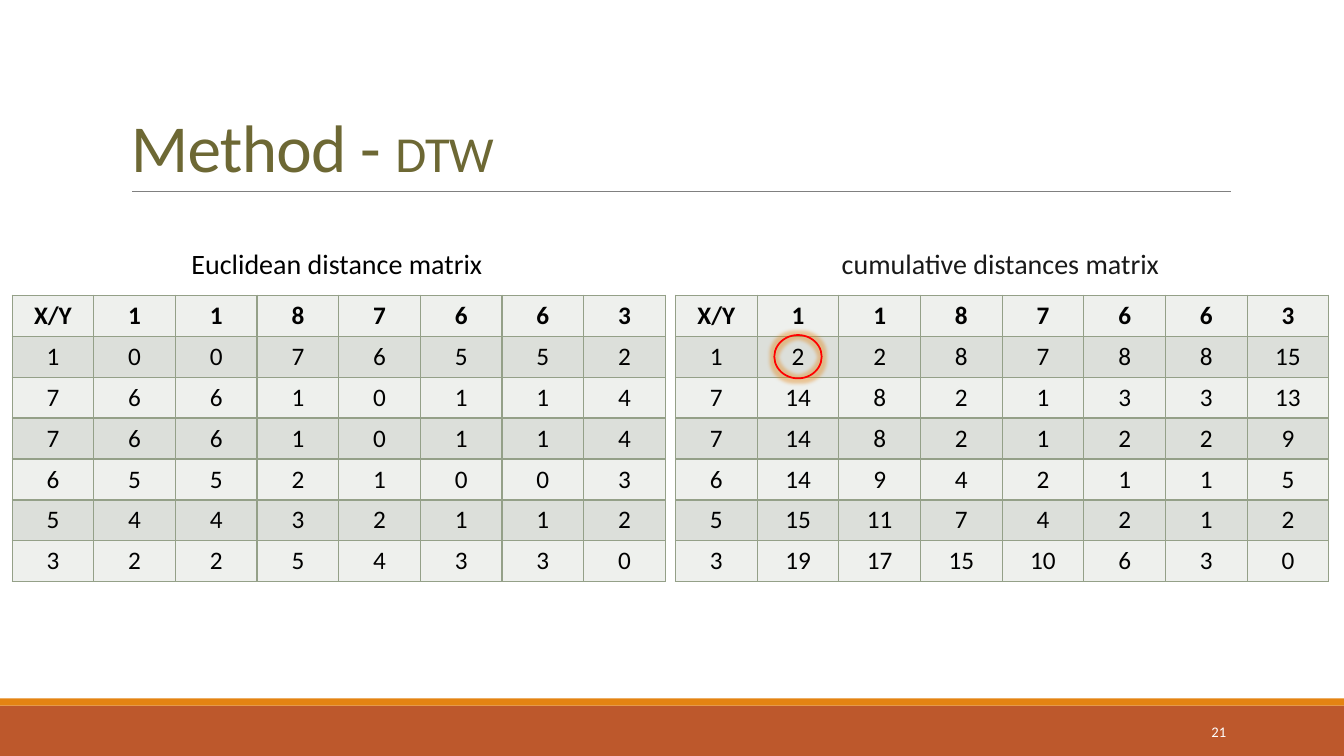
import pptx
import pptx.util
import pptx.dml.color
import pptx.enum.shapes
import pptx.enum.text
import pptx.oxml
import pptx.oxml.ns

Inches = pptx.util.Inches
Pt = pptx.util.Pt
ALIGN = pptx.enum.text.PP_ALIGN
ANCHOR = pptx.enum.text.MSO_ANCHOR
SHAPE = pptx.enum.shapes.MSO_SHAPE
NS = pptx.oxml.ns.nsdecls("a")

CELL_W, CELL_H = 0.81, 0.406
SERIES_Y = "1 1 8 7 6 6 3"
EUCLIDEAN = [
    "1 0 0 7 6 5 5 2",
    "7 6 6 1 0 1 1 4",
    "7 6 6 1 0 1 1 4",
    "6 5 5 2 1 0 0 3",
    "5 4 4 3 2 1 1 2",
    "3 2 2 5 4 3 3 0",
]
CUMULATIVE = [
    "1 2 2 8 7 8 8 15",
    "7 14 8 2 1 3 3 13",
    "7 14 8 2 1 2 2 9",
    "6 14 9 4 2 1 1 5",
    "5 15 11 7 4 2 1 2",
    "3 19 17 15 10 6 3 0",
]


def color(value):
    """Return the colour for a hex string."""
    return pptx.dml.color.RGBColor.from_string(value)


def add_run(p, text, size=18, fill="000000", bold=False, spacing=None):
    """Append a formatted run to a paragraph."""
    r = p.add_run()
    r.text = text
    r.font.name = "Calibri"
    r.font.size = Pt(size)
    r.font.bold = bold
    r.font.color.rgb = color(fill)
    if spacing is not None:
        r.font._element.set("spc", str(round(spacing * 100)))
    return r


def add_text(slide, box, text, anchor=ANCHOR.TOP, align=ALIGN.LEFT, wrap=True, **fmt):
    """Add a one-paragraph text box and return its paragraph."""
    tf = slide.shapes.add_textbox(*map(Inches, box)).text_frame
    tf.word_wrap = wrap
    tf.vertical_anchor = anchor
    p = tf.paragraphs[0]
    p.alignment = align
    add_run(p, text, **fmt)
    return p


def add_band(slide, box, fill):
    """Add a plain filled rectangle."""
    sp = slide.shapes.add_shape(SHAPE.RECTANGLE, *map(Inches, box))
    sp.shadow.inherit = False
    sp.fill.solid()
    sp.fill.fore_color.rgb = color(fill)
    sp.line.fill.background()


def add_header(slide, left, top, width, height):
    """Add the title and the rule below it."""
    p = add_text(slide, (left, top, width, height), "Method - ", anchor=ANCHOR.BOTTOM,
                 size=48, fill="6D6834", spacing=-0.5)
    p.line_spacing = 0.85
    add_run(p, "DTW", size=36, fill="6D6834", spacing=-0.5)
    bottom = Inches(top + height)
    rule = slide.shapes.add_connector(pptx.enum.shapes.MSO_CONNECTOR.STRAIGHT,
                                      Inches(left + 0.11), bottom, Inches(left + width + 0.01), bottom)
    rule.line.color.rgb = color("808080")
    rule.line.width = Pt(0.5)
    rule._element.spPr.append(pptx.oxml.parse_xml(f"<a:effectLst {NS}/>"))


def add_footer(slide, left, top, width, height):
    """Add the two footer bands and the slide number."""
    accent = 0.07
    add_band(slide, (left, top + accent, width, height - accent), "BD582C")
    add_band(slide, (left, top, width, accent), "E48312")
    add_text(slide, (left + 10.83, top + 0.13, 1.43, 0.4), "21", anchor=ANCHOR.MIDDLE,
             align=ALIGN.RIGHT, size=10.5, fill="FFFFFF")


def format_cell(cell, text, fill, bold):
    """Fill, border and label one matrix cell."""
    cell.fill.solid()
    cell.fill.fore_color.rgb = color(fill)
    p = cell.text_frame.paragraphs[0]
    p.alignment = ALIGN.CENTER
    add_run(p, text, bold=bold)
    for i, side in enumerate(("lnL", "lnR", "lnT", "lnB")):
        cell._tc.get_or_add_tcPr().insert(i, pptx.oxml.parse_xml(
            f'<a:{side} {NS} w="12700"><a:solidFill><a:srgbClr val="94A088"/></a:solidFill></a:{side}>'))


def add_matrix(slide, left, top, lines, caption, caption_box, caption_fill):
    """Add a captioned distance matrix."""
    dx, dy, width, height = caption_box
    add_text(slide, (left + dx, top + dy, width, height), caption, wrap=False, size=20, fill=caption_fill)
    rows = [line.split() for line in ["X/Y " + SERIES_Y] + lines]
    n_rows, n_cols = len(rows), len(rows[0])
    table = slide.shapes.add_table(n_rows, n_cols, Inches(left), Inches(top),
                                   Inches(n_cols * CELL_W), Inches(n_rows * CELL_H)).table
    table.first_row = table.horz_banding = False
    for column in table.columns:
        column.width = Inches(CELL_W)
    for i, values in enumerate(rows):
        table.rows[i].height = Inches(CELL_H)
        for j, value in enumerate(values):
            format_cell(table.cell(i, j), value, "DCDFDA" if i % 2 else "EEF0ED", i == 0)


def circle_cell(slide, left, top, row, col):
    """Ring one cell of the matrix at the given corner."""
    width, height = 0.47, 0.43
    x = left + (col + 0.5) * CELL_W - width / 2
    y = top + (row + 0.5) * CELL_H - height / 2
    sp = slide.shapes.add_shape(SHAPE.OVAL, Inches(x), Inches(y), Inches(width), Inches(height))
    sp.fill.background()
    sp.line.color.rgb = color("FF0000")
    sp.line.width = Pt(1.25)
    sp._element.spPr.append(pptx.oxml.parse_xml(
        f'<a:effectLst {NS}><a:glow rad="63500"><a:srgbClr val="E48312">'
        '<a:alpha val="40000"/></a:srgbClr></a:glow></a:effectLst>'))


def main():
    """Build and save the slide."""
    prs = pptx.Presentation()
    prs.slide_width, prs.slide_height = Inches(13.33), Inches(7.5)
    slide = prs.slides.add_slide(prs.slide_layouts[6])
    add_footer(slide, 0, 6.93, 13.33, 0.57)
    add_header(slide, 1.2, 0.31, 11, 1.59)
    top, left_x, right_x = 2.93, 0.12, 6.7
    add_matrix(slide, left_x, top, EUCLIDEAN, "Euclidean distance matrix",
               (1.68, -0.53, 3.12, 0.44), "000000")
    add_matrix(slide, right_x, top, CUMULATIVE, "cumulative distances matrix",
               (1.55, -0.53, 3.39, 0.44), "191919")
    circle_cell(slide, right_x, top, 1, 1)
    prs.save("out.pptx")


if __name__ == "__main__":
    main()
